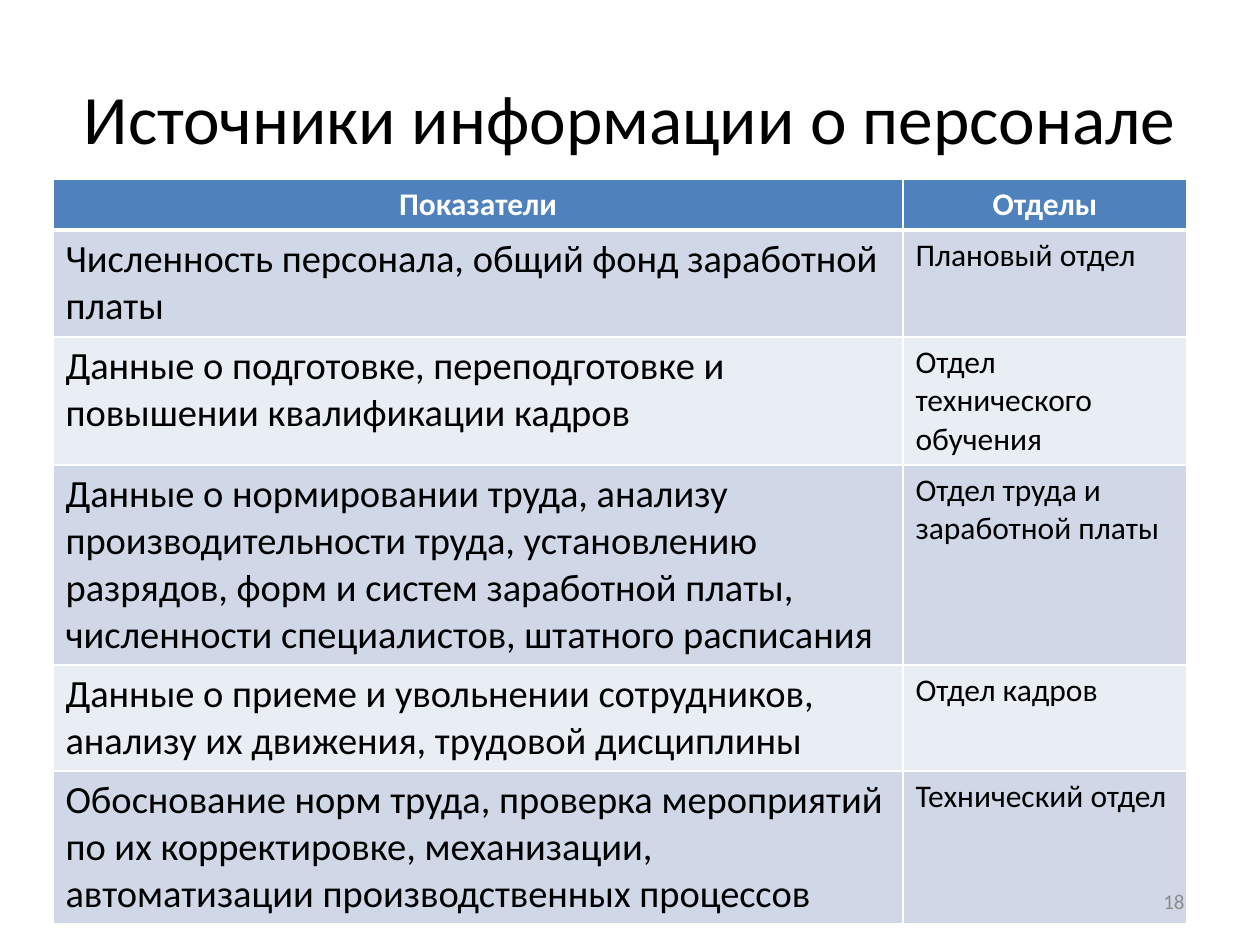
"""Build a slide with a table of personnel information sources."""
from lxml.etree import SubElement
from pptx import Presentation
from pptx.dml.color import RGBColor
from pptx.enum.text import MSO_ANCHOR as Anchor, PP_ALIGN as Align
from pptx.oxml.ns import qn
from pptx.util import Emu, Pt

TITLE = "Источники информации о персонале"
PAGE_NUMBER = "18"
HEADER = ("Показатели", "Отделы")
SOURCES = [
    ("Численность персонала, общий фонд заработной платы", "Плановый отдел"),
    ("Данные о подготовке, переподготовке и повышении квалификации кадров",
     "Отдел технического обучения"),
    ("Данные о нормировании труда, анализу производительности труда, "
     "установлению разрядов, форм и систем заработной платы, "
     "численности специалистов, штатного расписания",
     "Отдел труда и заработной платы"),
    ("Данные о приеме и увольнении сотрудников, анализу их движения, "
     "трудовой дисциплины", "Отдел кадров"),
    ("Обоснование норм труда, проверка мероприятий по их корректировке, "
     "механизации, автоматизации производственных процессов",
     "Технический отдел"),
]
COLORS = {"text": "000000", "white": "FFFFFF", "header": "4F81BD",
          "odd": "D0D8E8", "even": "E9EDF4", "number": "8C8C8C"}
FONT = "Calibri"
COLUMN_WIDTHS = (850, 284)
ROW_HEIGHTS = (51, 107, 128, 200, 106, 153)
BODY_SIZES = (22, 18)


def px(length):
    return Emu(round(length * 914400 / 126))


def write(frame, text, size, color="text", align=Align.LEFT, bold=False):
    frame.word_wrap = True
    paragraph = frame.paragraphs[0]
    paragraph.alignment = align
    run = paragraph.add_run()
    run.text = text
    run.font.name, run.font.size, run.font.bold = FONT, Pt(size), bold
    run.font.color.rgb = RGBColor.from_string(COLORS[color])


def add_label(slide, box, text, **style):
    frame = slide.shapes.add_textbox(*map(px, box)).text_frame
    write(frame, text, **style)
    frame.vertical_anchor = Anchor.MIDDLE


def style_cell(cell, fill, borders):
    properties = cell._tc.get_or_add_tcPr()
    for side, width in borders.items():
        line = SubElement(properties, qn(f"a:ln{side}"), w=str(Pt(width)))
        solid = SubElement(line, qn("a:solidFill"))
        SubElement(solid, qn("a:srgbClr"), val=COLORS["white"])
    cell.fill.solid()
    cell.fill.fore_color.rgb = RGBColor.from_string(COLORS[fill])


def add_sources(slide):
    rows = [HEADER, *SOURCES]
    table = slide.shapes.add_table(
        len(rows), len(HEADER), px(53), px(179),
        px(sum(COLUMN_WIDTHS)), px(sum(ROW_HEIGHTS))).table
    for column, width in zip(table.columns, COLUMN_WIDTHS):
        column.width = px(width)
    for r, (row, height) in enumerate(zip(rows, ROW_HEIGHTS)):
        table.rows[r].height = px(height)
        fill = "header" if r == 0 else "odd" if r % 2 else "even"
        borders = {"L": 1, "R": 1, "T": 3 if r == 1 else 1, "B": 3 if r == 0 else 1}
        for c, text in enumerate(row):
            cell = table.cell(r, c)
            style_cell(cell, fill, borders)
            if r == 0:
                write(cell.text_frame, text, 18, "white", Align.CENTER, True)
            else:
                write(cell.text_frame, text, BODY_SIZES[c])


def main():
    deck = Presentation()
    deck.slide_width, deck.slide_height = px(1260), px(945)
    slide = deck.slides.add_slide(deck.slide_layouts[6])
    add_label(slide, (63, 38, 1134, 157), TITLE, size=39.6, align=Align.CENTER)
    add_sources(slide)
    add_label(slide, (903, 876, 294, 50), PAGE_NUMBER, size=12,
              color="number", align=Align.RIGHT)
    deck.save("out.pptx")


if __name__ == "__main__":
    main()
